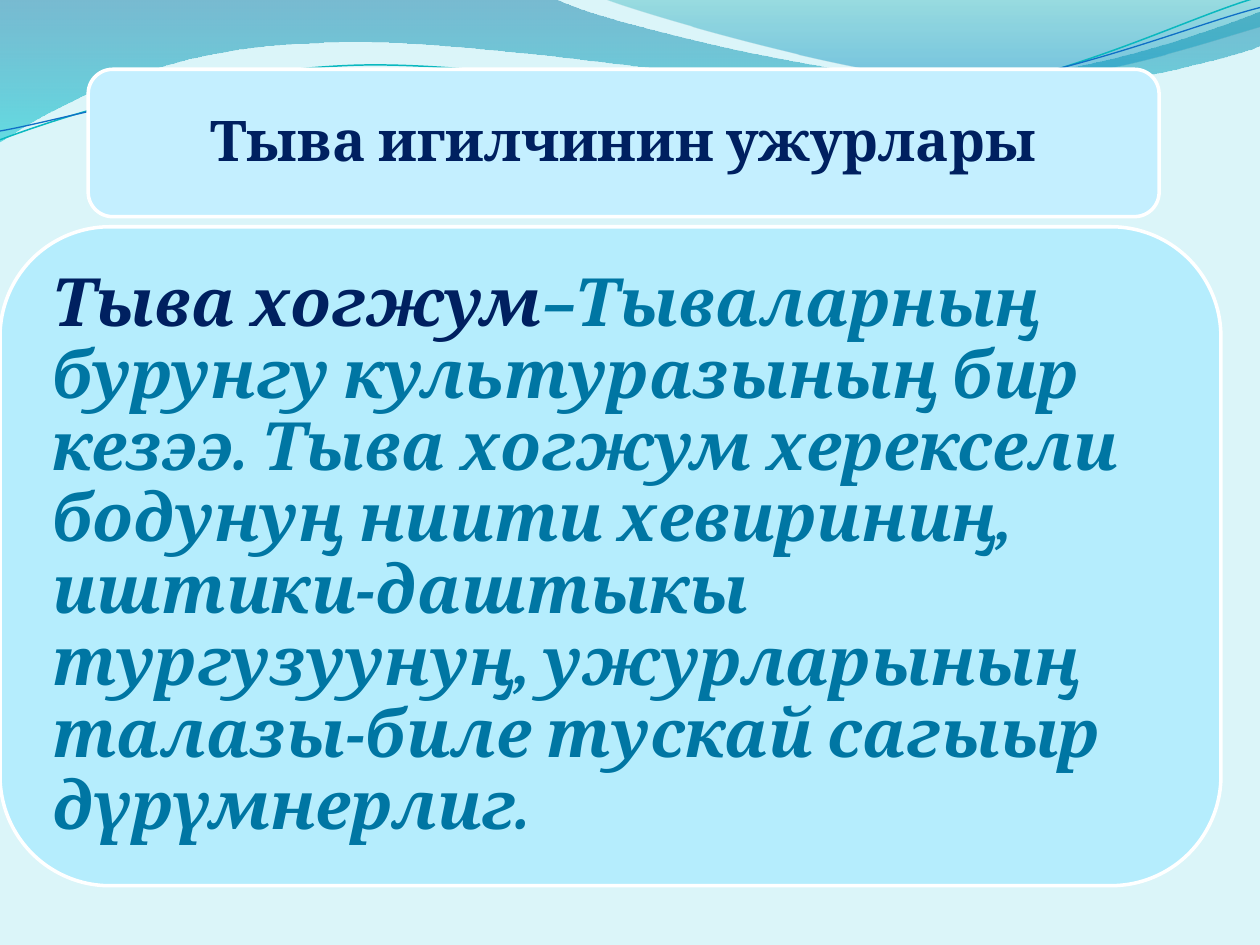
from lxml import etree
from pptx import Presentation
from pptx.dml.color import RGBColor
from pptx.enum.shapes import MSO_SHAPE
from pptx.enum.text import MSO_ANCHOR, PP_ALIGN
from pptx.oxml.ns import qn
from pptx.util import Inches, Pt

ROUND = MSO_SHAPE.ROUNDED_RECTANGLE
MIDDLE = MSO_ANCHOR.MIDDLE
LEFT, CENTER = PP_ALIGN.LEFT, PP_ALIGN.CENTER
FONT = "Cambria"
COLORS = {
    "back": "DBF5F9", "white": "FFFFFF", "title": "C4EFFF", "body": "B5EDFD",
    "navy": "002060", "blue": "0076A3", "deep": "0074A1", "aqua": "00C6CF",
    "teal": "00A1A9", "sky": "008BBF", "cyan": "0AB8BF", "royal": "0F6FC6",
}

# A pair is a straight step; six numbers are a cubic curve.
WIDE_WAVE = [
    (0, 0), (4.4, -0.01), (4.76, 0.17, 6.64, 0.63, 7.58, 0.63),
    (8.53, 0.63, 9.58, 0.26, 10, 0.09), (10.01, 0.36),
    (9.83, 0.44, 8.7, 0.76, 7.46, 0.75), (6.22, 0.75, 3.82, 0.28, 2.57, 0.34),
    (1.29, 0.36, 0.46, 0.83, -0.01, 1.13),
]
RIGHT_WAVE = [
    (4.79, -0.01), (5.09, 0.11, 6.82, 0.62, 7.69, 0.65),
    (8.56, 0.69, 9.61, 0.32, 10, 0.21), (10, 0),
]
CYAN_LINE = [
    (0, 1.11), (0.48, 0.93, 1.58, 0.57, 2.77, 0.52),
    (3.95, 0.47, 5.93, 0.89, 7.13, 0.8), (8.33, 0.71, 9.38, 0.15, 9.98, -0.02),
]
ROYAL_LINE = [
    (0, 1.04), (0.47, 0.96, 1.64, 0.61, 2.83, 0.56),
    (4.03, 0.51, 5.97, 0.84, 7.17, 0.75), (8.36, 0.67, 9.41, 0.21, 10, 0.06),
]


def color(name):
    return RGBColor.from_string(COLORS[name])


def bend(shape, steps):
    """Join the three straight pieces of each curved step into one curve."""
    lines = iter(list(shape._element.iter(qn("a:lnTo"))))
    for step in steps:
        first = next(lines)
        if len(step) == 2:
            continue
        first.tag = qn("a:cubicBezTo")
        for line in (next(lines), next(lines)):
            first.append(line[0])
            line.getparent().remove(line)


def add_path(slide, steps, close):
    points = [(Inches(step[i]), Inches(step[i + 1]))
              for step in steps for i in range(0, len(step), 2)]
    pen = slide.shapes.build_freeform(*points[0])
    pen.add_line_segments(points[1:], close=close)
    shape = pen.convert_to_shape()
    shape.shadow.inherit = False
    bend(shape, steps[1:])
    return shape


def add_wave(slide, steps, stops):
    """Draw a see-through wave; stops hold place, colour and opacity in %."""
    wave = add_path(slide, steps, True)
    wave.line.fill.background()
    wave.fill.gradient()
    wave.fill.gradient_angle = 270
    for stop, (place, name, alpha) in zip(wave.fill.gradient_stops, stops):
        stop.position = place
        stop.color.rgb = color(name)
    marks = wave._element.spPr.iter(qn("a:srgbClr"))
    for mark, (place, name, alpha) in zip(marks, stops):
        etree.SubElement(mark, qn("a:alpha")).set("val", str(alpha * 1000))


def add_curve(slide, steps, name, width):
    curve = add_path(slide, steps, False)
    curve.fill.background()
    curve.line.color.rgb = color(name)
    curve.line.width = Pt(width)


def add_panel(slide, box, fill, pad, align):
    """Draw a rounded panel and return its paragraph."""
    panel = slide.shapes.add_shape(ROUND, *map(Inches, box))
    panel.shadow.inherit = False
    panel.fill.solid()
    panel.fill.fore_color.rgb = color(fill)
    panel.line.color.rgb = color("white")
    panel.line.width = Pt(2)
    frame = panel.text_frame
    frame.word_wrap = True
    frame.vertical_anchor = MIDDLE
    frame.margin_left = frame.margin_right = Inches(pad)
    frame.margin_top = frame.margin_bottom = Inches(pad)
    para = frame.paragraphs[0]
    para.alignment = align
    para.line_spacing = 0.9
    return para


def add_run(para, text, size, name, italic=False):
    run = para.add_run()
    run.text = text
    font = run.font
    font.name, font.size = FONT, Pt(size)
    font.bold, font.italic = True, italic
    font.color.rgb = color(name)


def main():
    deck = Presentation()
    deck.slide_width, deck.slide_height = Inches(10), Inches(7.5)
    slide = deck.slides.add_slide(deck.slide_layouts[6])
    slide.background.fill.solid()
    slide.background.fill.fore_color.rgb = color("back")

    add_wave(slide, WIDE_WAVE, [(0, "deep", 45), (1, "aqua", 55)])
    add_wave(slide, RIGHT_WAVE, [(0, "teal", 30), (0.8, "sky", 45)])
    add_curve(slide, CYAN_LINE, "cyan", 0.85)
    add_curve(slide, ROYAL_LINE, "royal", 0.75)

    title = add_panel(slide, (0.7, 0.55, 8.5, 1.17), "title", 0.13, CENTER)
    add_run(title, "Тыва игилчинин ужурлары", 32, "navy")

    body = add_panel(slide, (0, 1.8, 9.69, 5.23), "body", 0.16, LEFT)
    add_run(body, "Тыва хогжум", 38, "navy", True)
    add_run(body, "–Тываларның бурунгу культуразының бир кезээ. "
            "Тыва хогжум херексели бодунуң ниити хевириниң, "
            "иштики-даштыкы тургузуунуң, ужурларының талазы-биле "
            "тускай сагыыр дүрүмнерлиг.", 38, "blue", True)

    deck.save("out.pptx")


if __name__ == "__main__":
    main()
